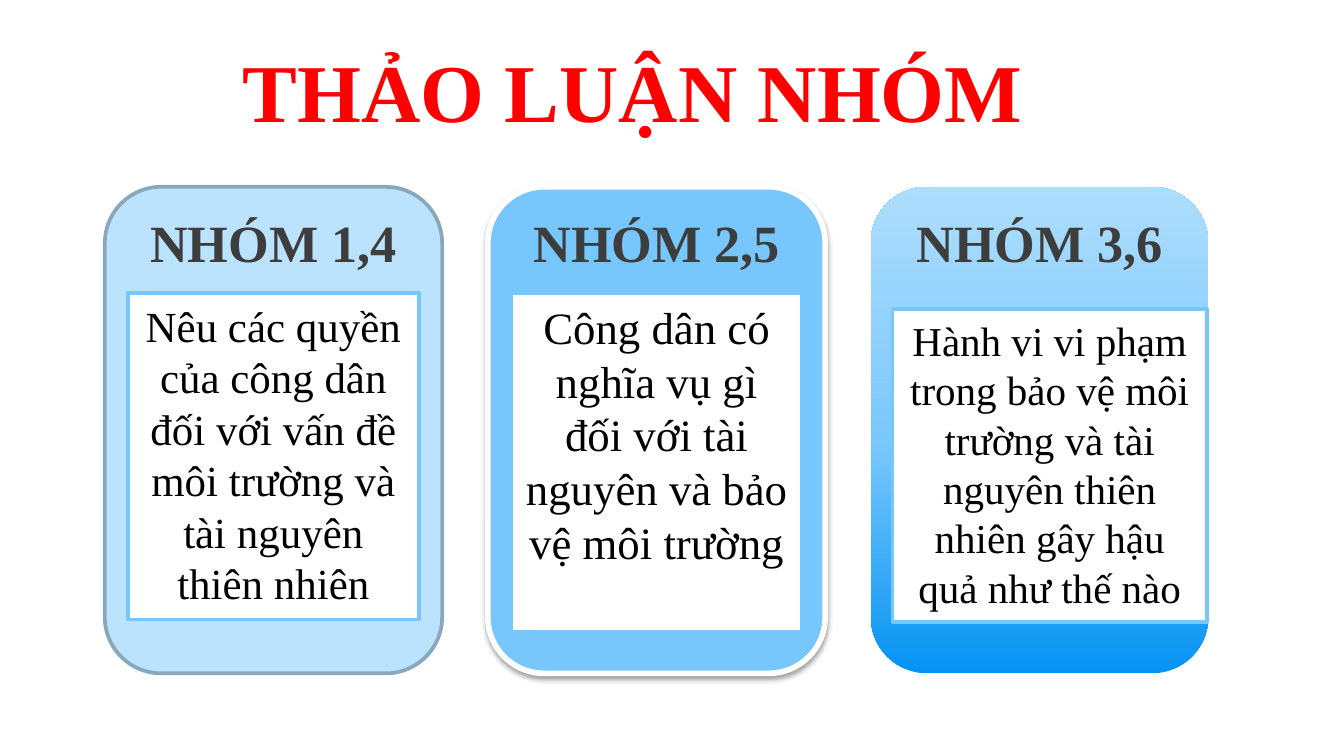
from dataclasses import dataclass

from lxml import etree
from pptx import Presentation
from pptx.dml.color import RGBColor
from pptx.enum.shapes import MSO_SHAPE
from pptx.enum.text import MSO_ANCHOR, PP_ALIGN
from pptx.oxml.ns import qn
from pptx.util import Emu, Pt

ROUND = MSO_SHAPE.ROUNDED_RECTANGLE
RECT = MSO_SHAPE.RECTANGLE
TOP = MSO_ANCHOR.TOP
CENTER = PP_ALIGN.CENTER
SCALE = 9144  # EMU per px, 100 px to the inch
WIDE = 1000


@dataclass(frozen=True)
class Theme:
    font: str = "Times New Roman"
    red: str = "FF0000"
    gray: str = "3D3D3D"
    black: str = "000000"
    white: str = "FFFFFF"
    pale: str = "BBE3FE"
    sky: str = "77C6FC"
    steel: str = "8AA8BC"
    fade: tuple[tuple[int, str], ...] = (
        (0, "0593F3"), (48, "7BC8FC"), (100, "ADDDFD"))
    title: int = 44
    head: int = 28


THEME = Theme()


@dataclass(frozen=True)
class Box:
    left: int
    top: int
    width: int
    height: int

    def emu(self) -> list[Emu]:
        sides = (self.left, self.top, self.width, self.height)
        return [Emu(side * SCALE) for side in sides]


@dataclass(frozen=True)
class Style:
    size: int
    color: str
    bold: bool = False
    pad: int = 5  # top inset


@dataclass(frozen=True)
class Group:
    head: str
    task: str
    size: int
    note: Box
    fill: str | None  # None means the theme's fade
    edge: str | None = None
    weight: int = 2
    shade: bool = False


CARD_TOP, CARD_W, CARD_H = 139, 251, 362
CARD_LEFT, CARD_STEP = 78, 285

GROUPS = (
    Group("NHÓM 1,4",
          "Nêu các quyền của công dân đối với vấn đề môi trường và "
          "tài nguyên thiên nhiên",
          23, Box(95, 218, 217, 243), THEME.pale, THEME.steel),
    Group("NHÓM 2,5",
          "Công dân có nghĩa vụ gì đối với tài nguyên và bảo vệ môi trường",
          24, Box(380, 218, 217, 252), THEME.sky, THEME.white, 3, True),
    Group("NHÓM 3,6",
          "Hành vi vi phạm trong bảo vệ môi trường và tài nguyên thiên nhiên "
          "gây hậu quả như thế nào",
          22, Box(664, 230, 234, 233), None),
)


def write(shape, text: str, style: Style) -> None:
    frame = shape.text_frame
    layout = {"word_wrap": True, "vertical_anchor": TOP,
              "margin_top": Emu(style.pad * SCALE)}
    for name, value in layout.items():
        setattr(frame, name, value)
    para = frame.paragraphs[0]
    para.alignment = CENTER
    run = para.add_run()
    run.text = text
    form = {"name": THEME.font, "size": Pt(style.size), "bold": style.bold}
    for name, value in form.items():
        setattr(run.font, name, value)
    run.font.color.rgb = RGBColor.from_string(style.color)


def add_tint(parent, color: str):
    return etree.SubElement(parent, qn("a:srgbClr"), val=color)


def fade(shape) -> None:
    """Fill with the theme's stops, running from bottom to top."""
    shape.fill.gradient()
    shape.fill.gradient_angle = 90
    stops = shape._element.spPr.find(".//" + qn("a:gsLst"))
    for stop in list(stops):
        stops.remove(stop)
    for place, color in THEME.fade:
        stop = etree.SubElement(stops, qn("a:gs"), pos=str(place * 1000))
        add_tint(stop, color)


def shade(shape) -> None:
    """Cast a soft shadow straight down."""
    effects = shape._element.spPr.find(qn("a:effectLst"))
    drop = etree.SubElement(
        effects, qn("a:outerShdw"), blurRad=str(Pt(3.1)), dist=str(Pt(1.6)),
        dir="5400000", rotWithShape="0")
    tint = add_tint(drop, THEME.black)
    etree.SubElement(tint, qn("a:alpha"), val="38000")


def add_panel(slide, kind, box: Box, fill: str | None, edge: str | None,
              weight: int):
    shape = slide.shapes.add_shape(kind, *box.emu())
    shape.shadow.inherit = False
    if fill:
        shape.fill.solid()
        shape.fill.fore_color.rgb = RGBColor.from_string(fill)
    else:
        fade(shape)
    if edge:
        shape.line.color.rgb = RGBColor.from_string(edge)
        shape.line.width = Pt(weight)
    else:
        shape.line.fill.background()
    return shape


def add_group(slide, group: Group, left: int) -> None:
    box = Box(left, CARD_TOP, CARD_W, CARD_H)
    card = add_panel(slide, ROUND, box, group.fill, group.edge, group.weight)
    if group.shade:
        shade(card)
    write(card, group.head, Style(THEME.head, THEME.gray, True))
    note = add_panel(slide, RECT, group.note, THEME.white, THEME.sky, 2)
    write(note, group.task, Style(group.size, THEME.black))


def main() -> None:
    deck = Presentation()
    deck.slide_width = Emu(WIDE * SCALE)
    deck.slide_height = Emu(WIDE * SCALE * 9 // 16)
    slide = deck.slides.add_slide(deck.slide_layouts[6])
    title = slide.shapes.add_textbox(*Box(162, 20, 618, 119).emu())
    write(title, "THẢO LUẬN NHÓM",
          Style(THEME.title, THEME.red, True, pad=10))
    for index, group in enumerate(GROUPS):
        add_group(slide, group, CARD_LEFT + index * CARD_STEP)
    deck.save("out.pptx")


if __name__ == "__main__":
    main()
